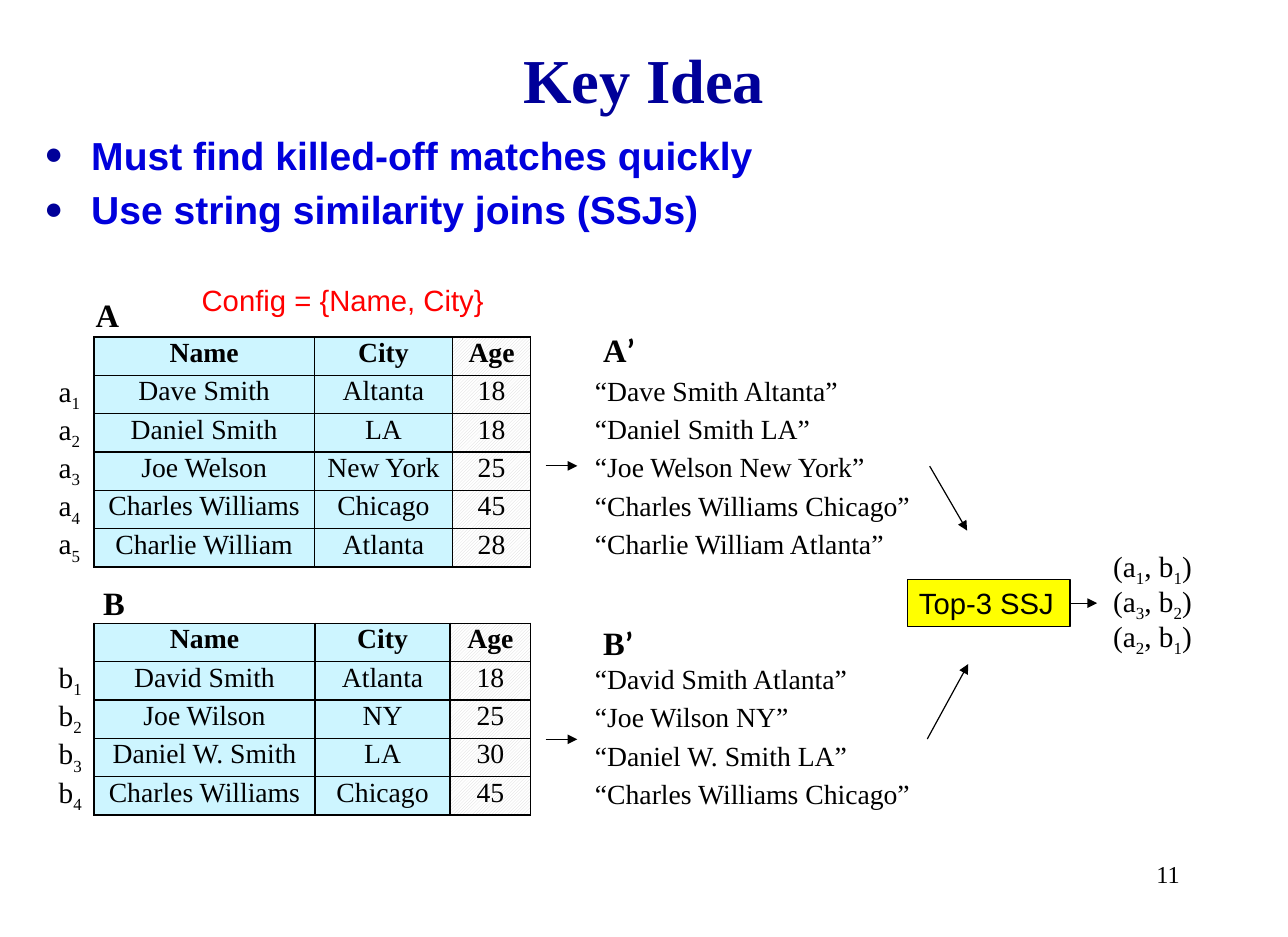
from lxml import etree
from pptx import Presentation
from pptx.dml.color import RGBColor
from pptx.enum.dml import MSO_PATTERN
from pptx.enum.shapes import MSO_CONNECTOR, MSO_SHAPE
from pptx.enum.text import MSO_ANCHOR, PP_ALIGN
from pptx.oxml.ns import qn
from pptx.util import Pt

LEFT, CENTER, RIGHT = PP_ALIGN.LEFT, PP_ALIGN.CENTER, PP_ALIGN.RIGHT
MIDDLE = MSO_ANCHOR.MIDDLE
STRAIGHT, RECTANGLE = MSO_CONNECTOR.STRAIGHT, MSO_SHAPE.RECTANGLE
DIAGONAL = MSO_PATTERN.DARK_UPWARD_DIAGONAL

BLACK = RGBColor(0x00, 0x00, 0x00)
WHITE = RGBColor(0xFF, 0xFF, 0xFF)
NAVY = RGBColor(0x00, 0x00, 0x99)
BLUE = RGBColor(0x00, 0x00, 0xDC)
RED = RGBColor(0xFF, 0x00, 0x00)
YELLOW = RGBColor(0xFF, 0xFF, 0x00)
CYAN = RGBColor(0xCD, 0xF5, 0xFF)
GREY = RGBColor(0xD9, 0xD9, 0xD9)

SERIF, SANS = "Times New Roman", "Arial"
ROW = 23.5

TABLE_A = {
    "name": "A", "name_x": -6, "name_y": -29.6, "prime_y": -8,
    "strings_y": 23.8, "strings_width": 212, "arrow_y": 79.2,
    "widths": (135.5, 85, 48),
    "rows": [("Name", "City", "Age"),
             ("Dave Smith", "Altanta", "18"),
             ("Daniel Smith", "LA", "18"),
             ("Joe Welson", "New York", "25"),
             ("Charles Williams", "Chicago", "45"),
             ("Charlie William", "Atlanta", "28")],
}
TABLE_B = {
    "name": "B", "name_x": -1.5, "name_y": -28.6, "prime_y": -3.6,
    "strings_y": 25, "strings_width": 219, "arrow_y": 71.3,
    "widths": (136, 83, 49.5),
    "rows": [("Name", "City", "Age"),
             ("David Smith", "Atlanta", "18"),
             ("Joe Wilson", "NY", "25"),
             ("Daniel W. Smith", "LA", "30"),
             ("Charles Williams", "Chicago", "45")],
}


def points(*lengths):
    return [Pt(length) for length in lengths]


def add_span(para, text, size, color=BLACK, name=SERIF, bold=False, baseline=0):
    span = para.add_run()
    span.text = text
    for key, value in {"size": Pt(size), "name": name, "bold": bold}.items():
        setattr(span.font, key, value)
    span.font.color.rgb = color
    if baseline:
        span._r.get_or_add_rPr().set("baseline", str(baseline))


def write(para, text, size, **style):
    """Write text in which an underscore lowers the character after it."""
    first, *rest = text.split("_")
    add_span(para, first, size, **style)
    for part in rest:
        add_span(para, part[0], size, baseline=-25000, **style)
        if part[1:]:
            add_span(para, part[1:], size, **style)


def add_text(page, box, text, size, **style):
    frame = page.shapes.add_textbox(*points(*box)).text_frame
    frame.word_wrap = True
    para = frame.paragraphs[0]
    write(para, text, size, **style)
    return para


def add_arrow(page, *ends):
    arrow = page.shapes.add_connector(STRAIGHT, *points(*ends))
    arrow.line.color.rgb = BLACK
    arrow.line.width = Pt(0.75)
    etree.SubElement(arrow.line._get_or_add_ln(), qn("a:tailEnd"), type="triangle")
    etree.SubElement(arrow._element.spPr, qn("a:effectLst"))


def set_borders(cell, bordered):
    props = cell._tc.get_or_add_tcPr()
    for index, side in enumerate(("lnL", "lnR", "lnT", "lnB")):
        line = etree.Element(qn(f"a:{side}"), w=str(Pt(1)))
        if bordered:
            fill = etree.SubElement(line, qn("a:solidFill"))
            etree.SubElement(fill, qn("a:srgbClr"), val=str(BLACK))
        else:
            etree.SubElement(line, qn("a:noFill"))
        props.insert(index, line)


def add_bullet(para):
    props = para._p.get_or_add_pPr()
    props.set("marL", str(Pt(28.8)))
    props.set("indent", str(Pt(-28.8)))
    color = etree.SubElement(props, qn("a:buClr"))
    etree.SubElement(color, qn("a:srgbClr"), val=str(NAVY))
    etree.SubElement(props, qn("a:buSzPct"), val="80000")
    etree.SubElement(props, qn("a:buFont"), typeface=SERIF)
    etree.SubElement(props, qn("a:buChar"), char="●")


def place_title(page, box):
    title = page.shapes.title
    for key, value in zip(("left", "top", "width", "height"), points(*box)):
        setattr(title, key, value)
    title.text_frame.vertical_anchor = MIDDLE
    para = title.text_frame.paragraphs[0]
    para.alignment = CENTER
    write(para, "Key Idea", 38.4, color=NAVY, bold=True)


def place_points(page, box, lines):
    frame = page.shapes.add_textbox(*points(*box)).text_frame
    frame.word_wrap = True
    for index, line in enumerate(lines):
        para = frame.add_paragraph() if index else frame.paragraphs[0]
        para.space_before = Pt(5)
        add_bullet(para)
        write(para, line, 24, color=BLUE, name=SANS, bold=True)


def fill_cyan(cell):
    cell.fill.solid()
    cell.fill.fore_color.rgb = CYAN


def fill_hatched(cell):
    cell.fill.patterned()
    cell.fill.pattern = DIAGONAL
    cell.fill.fore_color.rgb = GREY
    cell.fill.back_color.rgb = WHITE


def fill_clear(cell):
    cell.fill.background()


def place_grid(page, corner, rows, widths, fills, align=CENTER, header=True):
    size = (sum(widths), ROW * len(rows))
    table = page.shapes.add_table(len(rows), len(widths), *points(*corner, *size)).table
    table.first_row = table.horz_banding = False
    for column, width in zip(table.columns, widths):
        column.width = Pt(width)
    for y, values in enumerate(rows):
        table.rows[y].height = Pt(ROW)
        for x, value in enumerate(values):
            cell = table.cell(y, x)
            fills[x](cell)
            set_borders(cell, bordered=header)
            para = cell.text_frame.paragraphs[0]
            para.alignment = align
            para.line_spacing = 0.8
            write(para, value, 17, bold=header and y == 0)


def place_relation(page, corner, data):
    left, top = corner
    name, rows = data["name"], data["rows"]
    add_text(page, (left + data["name_x"], top + data["name_y"], 119, 31.5), name, 20, bold=True)
    place_grid(page, corner, rows, data["widths"], (fill_cyan, fill_cyan, fill_hatched))

    # Row labels
    for index in range(len(rows) - 1):
        add_text(page, (left - 28.8, top + 18.4 + ROW * index, 42, 29),
                 f"{name.lower()}_{index + 1}", 18)

    # Strings joined from name and city
    strings = [(f"“{person} {city}”",) for person, city, _ in rows[1:]]
    place_grid(page, (left + 300.8, top + data["strings_y"]), strings,
               (data["strings_width"],), (fill_clear,), align=LEFT, header=False)

    # Arrow to the string column and its heading
    middle = top + data["arrow_y"]
    add_arrow(page, left + 277.7, middle, left + 297.2, middle)
    para = add_text(page, (left + 306, top + data["prime_y"], 119, 31.5), name, 20, bold=True)
    add_span(para, "’", 20, name="Calibri", bold=True)


def place_join(page, box):
    left, top, width, height = box
    middle = top + height / 2
    join = page.shapes.add_shape(RECTANGLE, *points(*box))
    join.shadow.inherit = False
    join.fill.solid()
    join.fill.fore_color.rgb = YELLOW
    join.line.color.rgb = BLACK
    join.line.width = Pt(0.75)
    frame = join.text_frame
    frame.vertical_anchor = MIDDLE
    frame.word_wrap = True
    frame.paragraphs[0].alignment = LEFT
    write(frame.paragraphs[0], "Top-3 SSJ", 18, name=SANS)

    # Arrows in from both string columns, and out to the pairs
    add_arrow(page, left + 13.7, top - 69.8, left + 36.7, top - 30.2)
    add_arrow(page, left + 12.2, top + 97.9, left + 37.4, top + 51.8)
    add_arrow(page, left + width, middle, left + width + 16.6, middle)
    for index, pair in enumerate(("(a_1, b_1)", "(a_3, b_2)", "(a_2, b_1)")):
        add_text(page, (left + width + 19.4, top - 23.2 + 21.6 * index, 70, 29), pair, 18)


def main():
    deck = Presentation()
    deck.slide_width, deck.slide_height = points(792, 576)
    page = deck.slides.add_slide(deck.slide_layouts[5])
    place_title(page, (59.3, 19.4, 673, 57.6))
    place_points(page, (20.2, 77, 752, 435),
                 ("Must find killed-off matches quickly", "Use string similarity joins (SSJs)"))
    add_text(page, (116.9, 170, 190, 29), "Config = {Name, City}", 18, color=RED, name=SANS)
    place_relation(page, (57.8, 207.2), TABLE_A)
    place_relation(page, (57.8, 383.2), TABLE_B)
    place_join(page, (558, 356.4, 100, 28.8))
    add_text(page, (567.4, 524.8, 165, 38), "11", 14.9).alignment = RIGHT
    deck.save("out.pptx")


if __name__ == "__main__":
    main()
